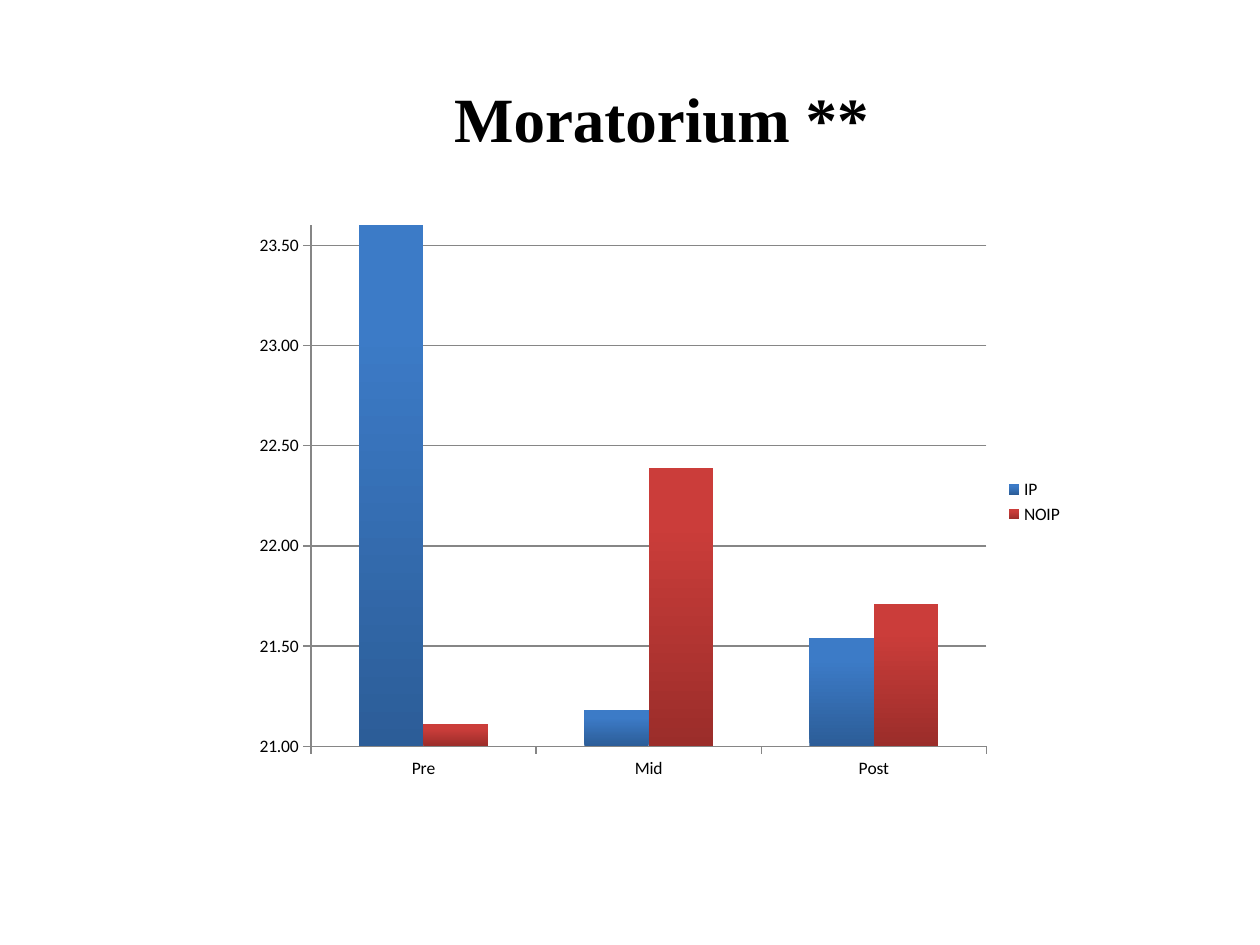
import pptx
import pptx.chart.data
import pptx.dml.color
import pptx.enum.chart
import pptx.enum.text
import pptx.util

SCALE = 914400 // 126  # EMU per px


def px(n):
    return pptx.util.Emu(n * SCALE)


def color(text):
    return pptx.dml.color.RGBColor.from_string(text)


class Deck:
    """Holds the style and the current slide."""
    ink, grid = "000000", "868686"
    head, body = "Times New Roman", "Calibri"

    def __init__(self):
        self.prs = pptx.Presentation()
        self.prs.slide_width = pptx.util.Inches(10)
        self.prs.slide_height = pptx.util.Inches(7.5)
        self.slide = self.prs.slides.add_slide(self.prs.slide_layouts[5])

    def font(self, font, name, size, bold=False):
        font.name, font.size, font.bold = name, pptx.util.Pt(size), bold
        font.color.rgb = color(self.ink)

    def title(self, text, x, y, w, h):
        box = self.slide.shapes.title
        box.left, box.top, box.width, box.height = map(px, (x, y, w, h))
        frame = box.text_frame
        frame.text = text
        frame.vertical_anchor = pptx.enum.text.MSO_ANCHOR.MIDDLE
        para = frame.paragraphs[0]
        para.alignment = pptx.enum.text.PP_ALIGN.CENTER
        self.font(para.runs[0].font, self.head, 36, True)

    def shade(self, fill, low, high):
        """Fill from a dark foot to a light upper part."""
        fill.gradient()
        fill.gradient_angle = 90
        for stop, tone, place in zip(fill.gradient_stops, (low, high), (0, 0.8)):
            stop.color.rgb = color(tone)
            stop.position = place

    def line(self, line):
        line.color.rgb = color(self.grid)
        line.width = pptx.util.Pt(0.75)

    def chart(self, cats, rows, x, y, w, h):
        data = pptx.chart.data.CategoryChartData(number_format="###0.00")
        data.categories = cats
        for name, vals, _ in rows:
            data.add_series(name, vals)
        kind = pptx.enum.chart.XL_CHART_TYPE.COLUMN_CLUSTERED
        chart = self.slide.shapes.add_chart(kind, *map(px, (x, y, w, h)), data).chart
        chart.has_title = False
        self.font(chart.font, self.body, 10)

        # Columns
        plot = chart.plots[0]
        plot.gap_width, plot.overlap = 150, 0
        plot.vary_by_categories = False
        for bar, (_, _, tones) in zip(plot.series, rows):
            self.shade(bar.format.fill, *tones)
            bar.invert_if_negative = False

        # Axes
        for axis in (chart.category_axis, chart.value_axis):
            axis.major_tick_mark = pptx.enum.chart.XL_TICK_MARK.OUTSIDE
            axis.minor_tick_mark = pptx.enum.chart.XL_TICK_MARK.NONE
            self.line(axis.format.line)
        scale = chart.value_axis
        scale.minimum_scale, scale.maximum_scale = 21, 23.6
        scale.major_unit = 0.5
        scale.has_major_gridlines = True
        self.line(scale.major_gridlines.format.line)
        scale.tick_labels.number_format = "###0.00"
        scale.tick_labels.number_format_is_linked = False

        # Legend
        chart.has_legend = True
        chart.legend.position = pptx.enum.chart.XL_LEGEND_POSITION.RIGHT
        chart.legend.include_in_layout = False


def main():
    deck = Deck()
    deck.title("Moratorium **", 105, 38, 1113, 158)
    rows = [
        ("IP", (23.61, 21.18, 21.54), ("2C5D98", "3C7BC7")),
        ("NOIP", (21.11, 22.39, 21.71), ("9B2D2A", "CB3D3A")),
    ]
    deck.chart(("Pre", "Mid", "Post"), rows, 243, 214, 833, 576)
    deck.prs.save("out.pptx")


if __name__ == "__main__":
    main()
